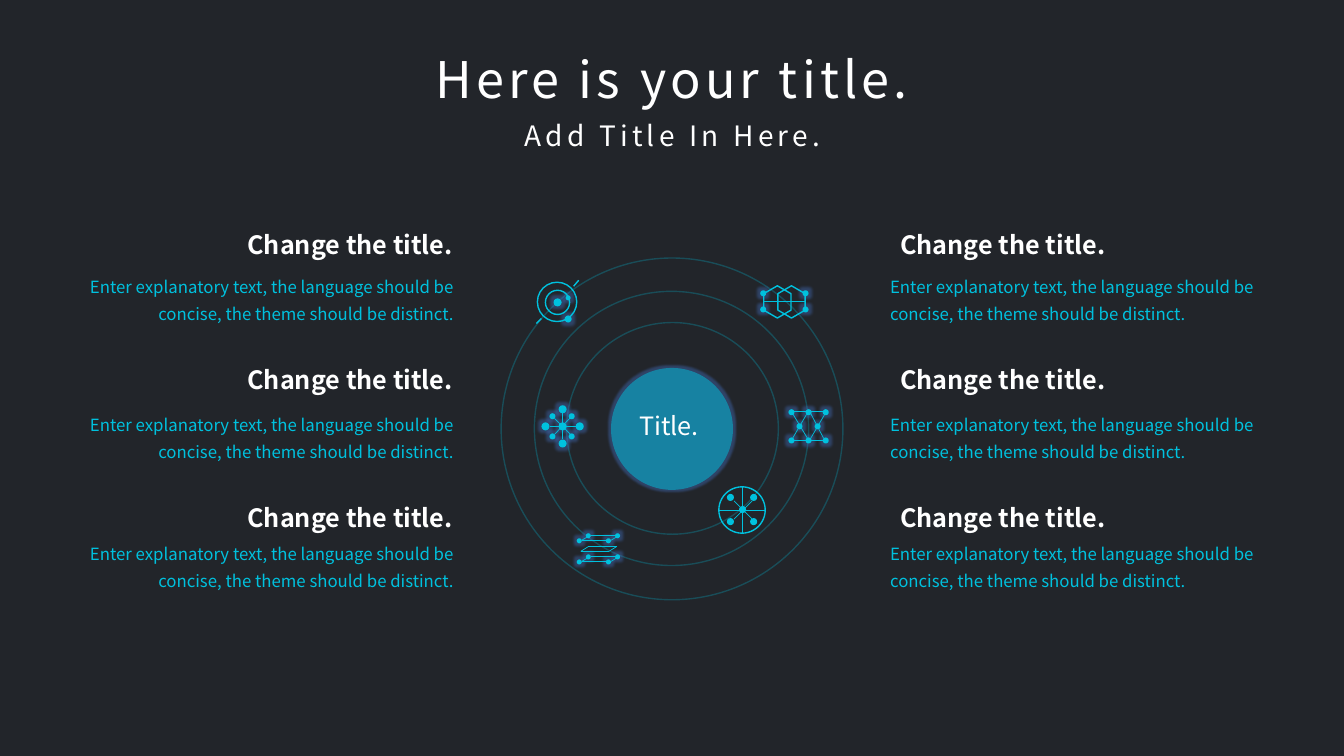
import itertools

import pptx
import pptx.dml.color
import pptx.enum.shapes
import pptx.enum.text
import pptx.oxml.ns
import pptx.util
from lxml import etree

COLORS = {"bg": "22252A", "accent": "00C1DE", "text": "FFFFFF", "glow": "4472C4"}
FONT = "Noto Sans CJK SC"
BODY = "Enter explanatory text, the language should be concise, the theme should be distinct."
HEADING = "Change the title."
ALIGN = pptx.enum.text.PP_ALIGN
SHAPE = pptx.enum.shapes.MSO_SHAPE
qn = pptx.oxml.ns.qn


def rgb(name):
    return pptx.dml.color.RGBColor.from_string(COLORS[name])


class Deck:
    scale = 9144

    def __init__(self, width, height):
        self.prs = pptx.Presentation()
        self.prs.slide_width = self.px(width)
        self.prs.slide_height = self.px(height)
        self.s = self.prs.slides.add_slide(self.prs.slide_layouts[6])
        self.s.background.fill.solid()
        self.s.background.fill.fore_color.rgb = rgb("bg")
        self.shapes = self.s.shapes

    def px(self, n):
        return pptx.util.Emu(n * self.scale)

    def box(self, *lengths):
        return [self.px(n) for n in lengths]

    def alpha(self, parent, percent):
        color = next(parent.iter(qn("a:srgbClr")))
        etree.SubElement(color, qn("a:alpha")).set("val", str(percent * 1000))

    def text(self, box, words, size, align=ALIGN.LEFT, color="text", bold=False,
             line_spacing=None, tracking=None):
        tf = self.shapes.add_textbox(*self.box(*box)).text_frame
        tf.word_wrap = True
        tf.auto_size = pptx.enum.text.MSO_AUTO_SIZE.SHAPE_TO_FIT_TEXT
        p = tf.paragraphs[0]
        r = p.add_run()
        r.text = words
        for item, formats in (
            (p, {"alignment": align, "line_spacing": line_spacing}),
            (r.font, {"name": FONT, "size": pptx.util.Pt(size), "bold": bold}),
            (r.font.color, {"rgb": rgb(color)}),
        ):
            for key, value in formats.items():
                setattr(item, key, value)
        if tracking:
            r.font._element.set("spc", str(tracking * 100))

    def shape(self, kind, box, opacity=100, rotation=0):
        sp = self.shapes.add_shape(kind, *self.box(*box))
        sp.shadow.inherit = False
        sp.rotation = rotation
        return sp

    def disc(self, x, y, size, opacity=100, glow=0):
        sp = self.shape(SHAPE.OVAL, (x, y, size, size))
        sp.fill.solid()
        sp.fill.fore_color.rgb = rgb("accent")
        sp.line.fill.background()
        if opacity < 100:
            self.alpha(sp.fill._xPr, opacity)
        if glow:
            effects = sp._element.spPr.find(qn("a:effectLst"))
            halo = etree.SubElement(effects, qn("a:glow"), rad=str(pptx.util.Pt(glow)))
            etree.SubElement(halo, qn("a:srgbClr"), val=COLORS["glow"])
            self.alpha(halo, 40)

    def outline(self, kind, box, opacity=100, rotation=0):
        sp = self.shape(kind, box, rotation=rotation)
        sp.fill.background()
        sp.line.color.rgb = rgb("accent")
        sp.line.width = pptx.util.Pt(1)
        if opacity < 100:
            self.alpha(sp.line._ln, opacity)
        return sp

    def ring(self, x, y, size, opacity=100):
        self.outline(SHAPE.OVAL, (x, y, size, size), opacity)

    def hexagon(self, x, y):
        sp = self.outline(SHAPE.HEXAGON, (x, y, 32, 27), rotation=90)
        sp.adjustments[0] = 0.29

    def line(self, ends, width=0.5):
        straight = pptx.enum.shapes.MSO_CONNECTOR.STRAIGHT
        c = self.shapes.add_connector(straight, *self.box(*ends))
        c.line.color.rgb = rgb("accent")
        c.line.width = pptx.util.Pt(width)
        etree.SubElement(c._element.spPr, qn("a:effectLst"))

    def icon(self, dots=(), lines=(), rings=(), hexagons=(), width=0.5, glow=4):
        self.shapes = self.s.shapes.add_group_shape().shapes
        for dot in dots:
            self.disc(*dot, glow=glow)
        for ring in rings:
            self.ring(*ring)
        for corner in hexagons:
            self.hexagon(*corner)
        for ends in lines:
            self.line(ends, width)
        self.shapes = self.s.shapes


def grid(xs, ys, size):
    return [(x, y, size) for x, y in itertools.product(xs, ys)]


def layers_icon(deck):
    dots = []
    lines = [(584, 542, 612, 542), (576, 547, 604, 547),
             (584, 542, 576, 547), (612, 542, 604, 547)]
    for dy in (0, 21):
        for dx in (0, 29):
            dots += [(581 + dx, 529 + dy, 5), (572 + dx, 534 + dy, 5)]
            lines.append((582 + dx, 533 + dy, 577 + dx, 536 + dy))
        lines += [(586, 531 + dy, 610, 531 + dy), (577, 536 + dy, 601, 536 + dy)]
    deck.icon(dots, lines)


def draw_icons(deck):
    layers_icon(deck)
    deck.icon(
        dots=[(549, 296, 8), (561, 293, 5), (560, 313, 7)],
        rings=[(541, 288, 24), (533, 280, 39)],
        lines=[(574, 278, 569, 284), (537, 316, 532, 321)],
        width=1,
    )
    deck.icon(
        dots=grid((782, 799, 816), (406, 434), 6) + grid((790, 808), (420,), 6),
        lines=[(788, y, 816, y) for y in (408, 437)]
        + [(800, 411, 786, 435), (786, 410, 801, 435),
           (804, 410, 817, 435), (818, 411, 804, 435)],
    )
    deck.icon(
        dots=grid((721, 744), (490, 514), 7) + [(733, 502, 7)],
        rings=[(713, 483, 46)],
        lines=[(736, 483, 736, 529), (713, 506, 759, 506),
               (728, 497, 746, 515), (746, 497, 728, 515)],
        glow=0,
    )
    deck.icon(
        dots=grid((754, 796), (288, 304), 6),
        hexagons=[(755, 286), (769, 286)],
        lines=[(758, 299, 799, 299)],
    )
    deck.icon(
        dots=grid((554,), (402, 419, 436), 8) + grid((537, 571), (419,), 8)
        + grid((545, 564), (410, 430), 6),
        lines=[(550, 415, 566, 431), (565, 415, 550, 431),
               (558, 410, 558, 436), (545, 423, 571, 423)],
    )


def main():
    deck = Deck(1333, 750)
    deck.text((376, 43, 581, 71), "Here is your title.", 36, ALIGN.CENTER, tracking=3)
    deck.text((482, 113, 370, 44), "Add Title In Here.", 20, ALIGN.CENTER, tracking=3)

    deck.disc(606, 365, 121, opacity=50, glow=3)
    for x, y, size in ((530, 289, 272), (562, 320, 210), (497, 256, 339)):
        deck.ring(x, y, size, opacity=25)
    draw_icons(deck)

    columns = ((39, 189, 270, ALIGN.RIGHT), (873, 883, 288, ALIGN.LEFT))
    rows = ((223, 264), (357, 401), (493, 529))
    for (body_x, head_x, head_w, align), (head_y, body_y) in itertools.product(columns, rows):
        deck.text((body_x, body_y, 421, 34), BODY, 12, align, "accent", line_spacing=1.3)
        deck.text((head_x, head_y, head_w, 40), HEADING, 18, align, bold=True)
    deck.text((600, 402, 127, 40), "Title.", 18, ALIGN.CENTER)
    deck.prs.save("out.pptx")


if __name__ == "__main__":
    main()
